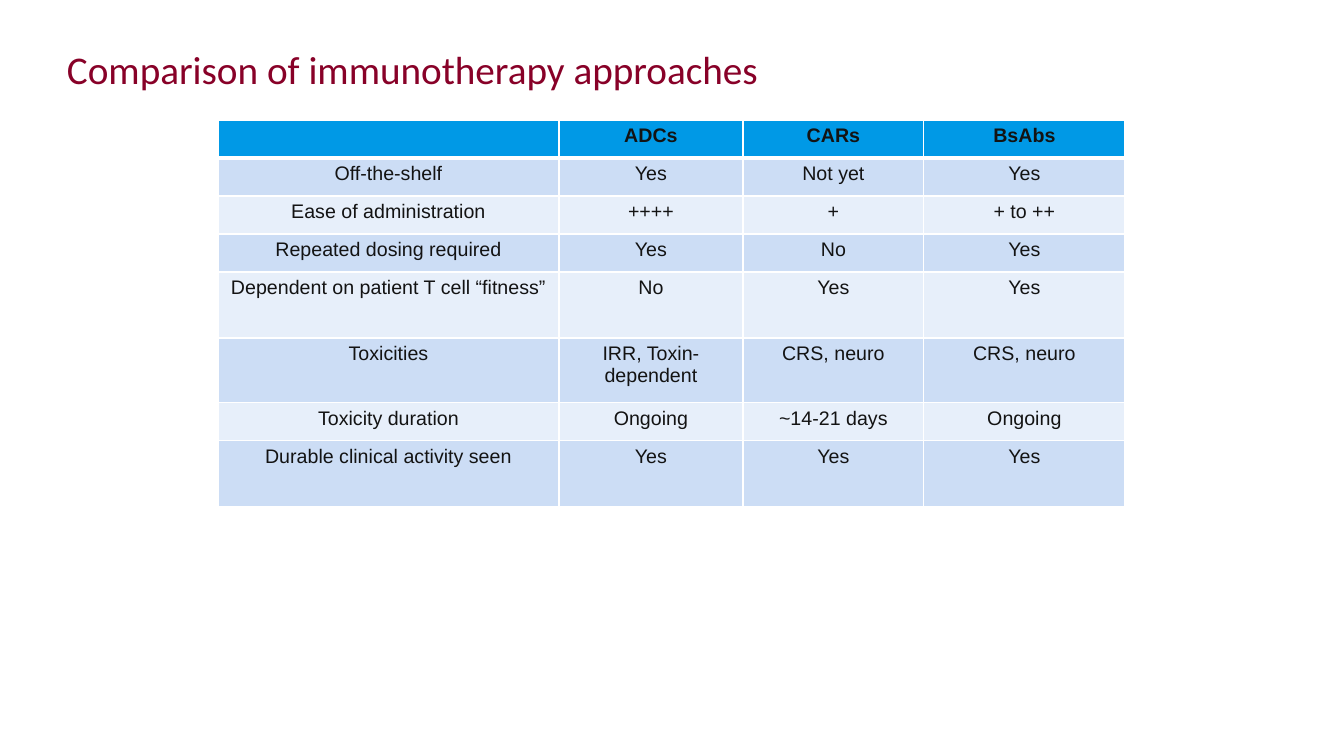
from lxml.etree import SubElement
from pptx import Presentation
from pptx.dml.color import RGBColor
from pptx.enum.text import MSO_ANCHOR, PP_ALIGN
from pptx.oxml.ns import qn
from pptx.util import Emu, Pt

PX = 914400 / 100.8
MAROON = RGBColor(0x88, 0x01, 0x28)
INK = RGBColor(0x13, 0x13, 0x13)
HEADER_BLUE = RGBColor(0x00, 0x99, 0xE6)
BAND_DARK = RGBColor(0xCC, 0xDD, 0xF5)
BAND_LIGHT = RGBColor(0xE7, 0xEF, 0xFA)
WHITE = RGBColor(0xFF, 0xFF, 0xFF)

COLUMN_WIDTHS = [341, 184, 181, 201]
ROW_HEIGHTS = [38, 38, 38, 38, 66, 65, 38, 66]
COMPARISON = [
    ["", "ADCs", "CARs", "BsAbs"],
    ["Off-the-shelf", "Yes", "Not yet", "Yes"],
    ["Ease of administration", "++++", "+", "+ to ++"],
    ["Repeated dosing required", "Yes", "No", "Yes"],
    ["Dependent on patient T cell “fitness”", "No", "Yes", "Yes"],
    ["Toxicities", "IRR, Toxin-dependent", "CRS, neuro", "CRS, neuro"],
    ["Toxicity duration", "Ongoing", "~14-21 days", "Ongoing"],
    ["Durable clinical activity seen", "Yes", "Yes", "Yes"],
]


def px(length):
    return Emu(round(length * PX))


class SlideBuilder:
    title_font, title_size = "Calibri", Pt(28)
    table_font, table_size = "Arial", Pt(14)
    thin_border, thick_border = Pt(0.96), Pt(3)

    def __init__(self, presentation):
        self.slide = presentation.slides.add_slide(presentation.slide_layouts[5])

    def add_title(self, text, left, top, width, height):
        title = self.slide.shapes.title
        title.left, title.top = px(left), px(top)
        title.width, title.height = px(width), px(height)
        frame = title.text_frame
        frame.text = text
        frame.word_wrap = True
        frame.vertical_anchor = MSO_ANCHOR.BOTTOM
        frame.margin_left = frame.margin_right = 0
        frame.margin_top = frame.margin_bottom = 0
        paragraph = frame.paragraphs[0]
        paragraph.alignment = PP_ALIGN.LEFT
        self.format_font(paragraph.runs[0].font, self.title_font,
                         self.title_size, MAROON, False)

    def add_table(self, rows, left, top, widths, heights):
        table = self.slide.shapes.add_table(
            len(rows), len(widths), px(left), px(top),
            px(sum(widths)), px(sum(heights))).table
        for column, width in zip(table.columns, widths):
            column.width = px(width)
        for row_index, (row, height) in enumerate(zip(rows, heights)):
            table.rows[row_index].height = px(height)
            for column_index, text in enumerate(row):
                self.fill_cell(table.cell(row_index, column_index), text, row_index)

    def fill_cell(self, cell, text, row_index):
        is_header = row_index == 0
        self.add_borders(cell, row_index)
        cell.fill.solid()
        band = BAND_DARK if row_index % 2 else BAND_LIGHT
        cell.fill.fore_color.rgb = HEADER_BLUE if is_header else band
        cell.margin_left = cell.margin_right = px(7)
        cell.margin_top = cell.margin_bottom = px(5)
        cell.text_frame.text = text
        paragraph = cell.text_frame.paragraphs[0]
        paragraph.alignment = PP_ALIGN.CENTER
        for run in paragraph.runs:
            self.format_font(run.font, self.table_font, self.table_size,
                             INK, is_header)
        if not text:
            SubElement(paragraph._p, qn("a:endParaRPr"),
                       sz=str(self.table_size.centipoints))

    def add_borders(self, cell, row_index):
        """Draw white cell edges, thick between the header and the body."""
        top = self.thick_border if row_index == 1 else self.thin_border
        bottom = self.thick_border if row_index == 0 else self.thin_border
        edges = {"lnL": self.thin_border, "lnR": self.thin_border,
                 "lnT": top, "lnB": bottom}
        properties = cell._tc.get_or_add_tcPr()
        for edge, width in edges.items():
            line = SubElement(properties, qn(f"a:{edge}"), w=str(int(width)))
            fill = SubElement(line, qn("a:solidFill"))
            SubElement(fill, qn("a:srgbClr"), val=str(WHITE))

    def format_font(self, font, name, size, color, bold):
        font.name = name
        font.size = size
        font.bold = bold
        font.color.rgb = color


def main():
    presentation = Presentation()
    presentation.slide_width, presentation.slide_height = px(1344), px(756)
    builder = SlideBuilder(presentation)
    builder.add_title("Comparison of immunotherapy approaches", 67, 31, 1252, 61)
    builder.add_table(COMPARISON, 218, 120, COLUMN_WIDTHS, ROW_HEIGHTS)
    presentation.save("out.pptx")


if __name__ == "__main__":
    main()
